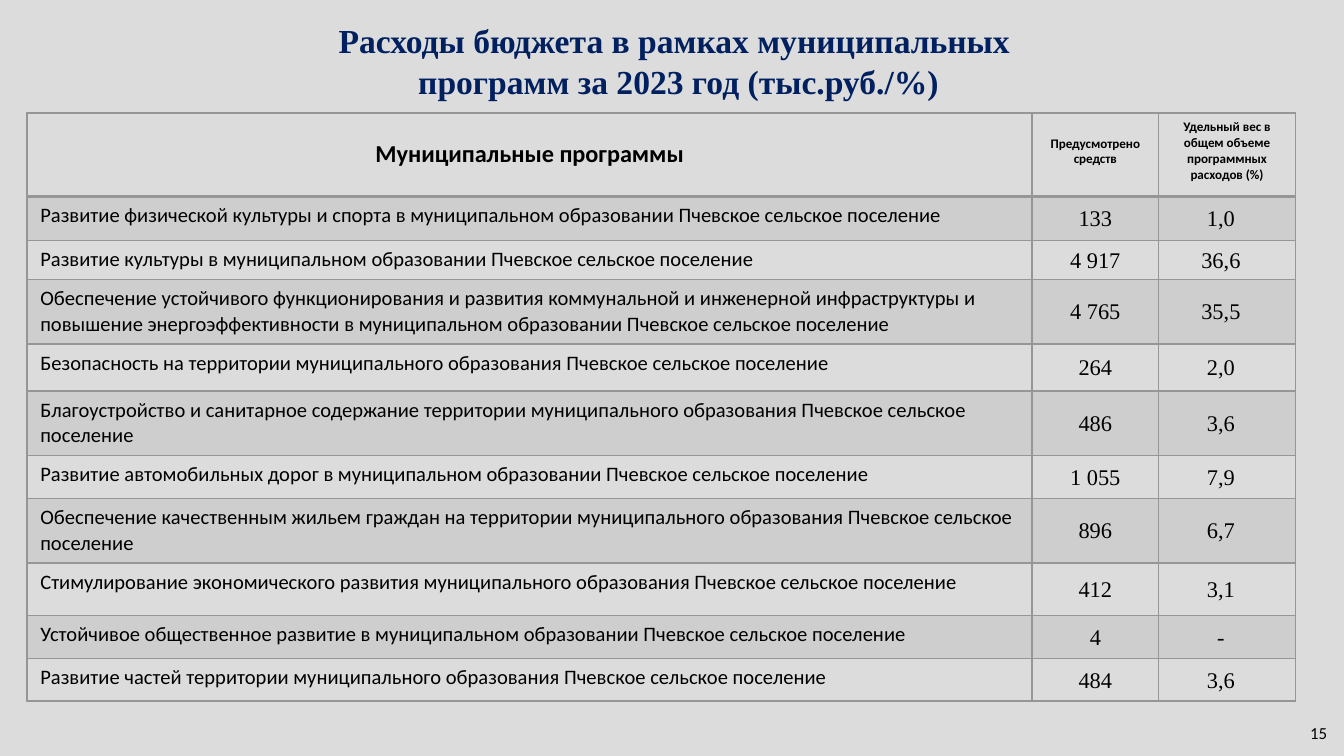
import pptx
import pptx.util
import pptx.dml.color
import pptx.enum.text
import pptx.oxml

Inches = pptx.util.Inches
Pt = pptx.util.Pt
RGBColor = pptx.dml.color.RGBColor
Align = pptx.enum.text.PP_ALIGN
Anchor = pptx.enum.text.MSO_ANCHOR

PAPER = RGBColor(0xDC, 0xDC, 0xDC)
BAND = RGBColor(0xCE, 0xCE, 0xCE)
RULE = RGBColor(0x96, 0x96, 0x96)
NAVY = RGBColor(0x00, 0x20, 0x60)
BLACK = RGBColor(0, 0, 0)
SERIF = "Times New Roman"
SANS = "Calibri"
SPACE = "http://schemas.openxmlformats.org/drawingml/2006/main"

WIDTHS = [7.48, 0.94, 1.02]
HEIGHTS = [0.62, 0.33, 0.29, 0.48, 0.35, 0.48, 0.32, 0.48, 0.39, 0.32, 0.32]
HEADS = [
    ("Муниципальные программы", 13, Anchor.MIDDLE, 0.05),
    ("Предусмотрено средств", 7, Anchor.TOP, 0.17),
    ("Удельный вес в общем объеме программных расходов (%)", 7, Anchor.TOP, 0.05),
]
PLACE = "Пчевское сельское поселение"
ROWS = [
    ("Развитие физической культуры и спорта в муниципальном образовании", "133", "1,0"),
    ("Развитие культуры в муниципальном образовании", "4 917", "36,6"),
    ("Обеспечение устойчивого функционирования и развития коммунальной и "
     "инженерной инфраструктуры и повышение энергоэффективности в "
     "муниципальном образовании", "4 765", "35,5"),
    ("Безопасность на территории муниципального образования", "264", "2,0"),
    ("Благоустройство и санитарное содержание территории "
     "муниципального образования", "486", "3,6"),
    ("Развитие автомобильных дорог в муниципальном образовании", "1 055", "7,9"),
    ("Обеспечение качественным жильем граждан на территории "
     "муниципального образования", "896", "6,7"),
    ("Стимулирование экономического развития муниципального образования",
     "412", "3,1"),
    ("Устойчивое общественное развитие в муниципальном образовании", "4", "-"),
    ("Развитие частей территории муниципального образования", "484", "3,6"),
]


def write(frame, text, size=11, font=SANS, color=BLACK, bold=False,
          align=Align.LEFT, lead=None):
    """Put formatted text into a text frame."""
    par = frame.paragraphs[0]
    par.text = text
    par.alignment = align
    if lead:
        par.line_spacing = Pt(lead)
    for run in par.runs:
        run.font.size = Pt(size)
        run.font.name = font
        run.font.bold = bold
        run.font.color.rgb = color


def edge(cell, row):
    """Draw the four borders of a cell, heavier under the header."""
    props = cell._tc.get_or_add_tcPr()
    heavy = {("B", 0), ("T", 1)}
    for side in "LRTB":
        width = Pt(2 if (side, row) in heavy else 1)
        props.append(pptx.oxml.parse_xml(
            f'<a:ln{side} xmlns:a="{SPACE}" w="{width}"><a:solidFill>'
            f'<a:srgbClr val="{RULE}"/></a:solidFill></a:ln{side}>'))


def paint(cell, row):
    """Set the borders and the band fill of a cell."""
    edge(cell, row)
    if row % 2:
        cell.fill.solid()
        cell.fill.fore_color.rgb = BAND
    else:
        cell.fill.background()


def add_title(slide):
    """Place and format the slide title."""
    title = slide.shapes.title
    title.left, title.top = Inches(0.51), Inches(0.13)
    title.width, title.height = Inches(9.08), Inches(0.63)
    frame = title.text_frame
    frame.auto_size = pptx.enum.text.MSO_AUTO_SIZE.NONE
    frame.vertical_anchor = Anchor.MIDDLE
    write(frame, "Расходы бюджета в рамках муниципальных \v"
          "программ за 2023 год (тыс.руб./%)", size=18, font=SERIF,
          color=NAVY, bold=True, align=Align.CENTER, lead=22)


def fill_head(table):
    """Fill the header row."""
    for col, (text, size, anchor, top) in enumerate(HEADS):
        cell = table.cell(0, col)
        cell.vertical_anchor = anchor
        cell.margin_top = Inches(top)
        write(cell.text_frame, text, size=size, bold=True, align=Align.CENTER)
        paint(cell, 0)


def fill_row(table, row, name, sums):
    """Fill one programme row with its name and figures."""
    cell = table.cell(row, 0)
    write(cell.text_frame, f"{name} {PLACE}")
    paint(cell, row)
    for col, (text, pad) in enumerate(zip(sums, (0.01, 0.1)), 1):
        cell = table.cell(row, col)
        cell.vertical_anchor = Anchor.MIDDLE
        cell.margin_left = cell.margin_top = Inches(0.01)
        cell.margin_right, cell.margin_bottom = Inches(pad), 0
        write(cell.text_frame, text, size=12, font=SERIF, align=Align.CENTER)
        paint(cell, row)


def add_grid(slide):
    """Add the table of municipal programmes."""
    table = slide.shapes.add_table(
        len(HEIGHTS), len(WIDTHS), Inches(0.2), Inches(0.84),
        Inches(sum(WIDTHS)), Inches(sum(HEIGHTS))).table
    table.horz_banding = False
    for col, width in zip(table.columns, WIDTHS):
        col.width = Inches(width)
    for row, height in zip(table.rows, HEIGHTS):
        row.height = Inches(height)
    fill_head(table)
    for row, (name, *sums) in enumerate(ROWS, 1):
        fill_row(table, row, name, sums)


def add_page(slide):
    """Add the page number."""
    box = slide.shapes.add_textbox(
        Inches(9.65), Inches(5.33), Inches(0.33), Inches(0.25))
    box.text_frame.word_wrap = False
    write(box.text_frame, "15", size=9)


def main():
    """Build the slide and save it."""
    deck = pptx.Presentation()
    deck.slide_width = Inches(10)
    deck.slide_height = deck.slide_width * 9 // 16
    slide = deck.slides.add_slide(deck.slide_layouts[5])
    slide.background.fill.solid()
    slide.background.fill.fore_color.rgb = PAPER
    add_title(slide)
    add_grid(slide)
    add_page(slide)
    deck.save("out.pptx")


if __name__ == "__main__":
    main()
